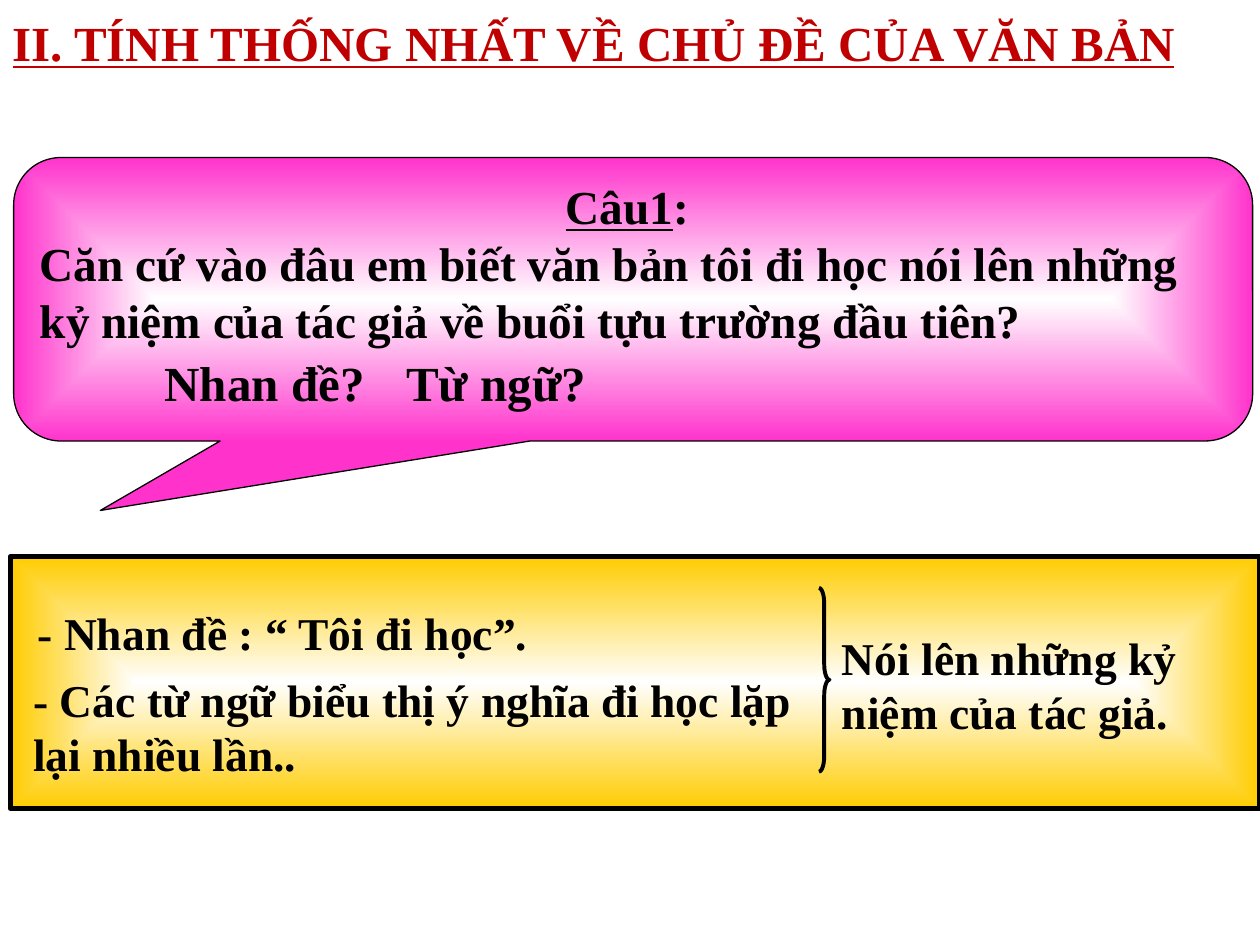
from dataclasses import dataclass

from lxml import etree
from pptx import Presentation
from pptx.dml.color import RGBColor
from pptx.enum.shapes import MSO_SHAPE as Shape
from pptx.enum.text import MSO_ANCHOR as Anchor, MSO_AUTO_SIZE as AutoSize, PP_ALIGN as Align
from pptx.oxml.ns import qn
from pptx.util import Inches, Pt

COLUMNS, ROWS = 120, 90
TITLE_ONLY = 5


@dataclass(frozen=True)
class Theme:
    font: str = "Times New Roman"
    ink: str = "000000"
    heading: str = "C00000"
    glow: str = "FFFFFF"
    question: str = "FF33CC"
    answer: str = "FFCC00"
    title_size: int = 28
    question_size: int = 27
    answer_size: int = 26


def write(paragraph, text, *, theme, size, color=None, underline=False, align=Align.LEFT):
    paragraph.alignment = align
    run = paragraph.add_run()
    run.text = text
    font = run.font
    font.name, font.size = theme.font, Pt(size)
    font.bold, font.underline = True, underline
    font.color.rgb = RGBColor.from_string(color or theme.ink)


class SlideBuilder:
    def __init__(self, presentation, theme):
        self.theme = theme
        self.width = presentation.slide_width
        self.height = presentation.slide_height
        self.slide = presentation.slides.add_slide(presentation.slide_layouts[TITLE_ONLY])

    def place(self, column, row, columns, rows):
        across, down = self.width / COLUMNS, self.height / ROWS
        return [int(value) for value in (column * across, row * down, columns * across, rows * down)]

    def title(self, text, *area):
        title = self.slide.shapes.title
        title.left, title.top, title.width, title.height = self.place(*area)
        frame = title.text_frame
        frame.auto_size, frame.vertical_anchor = AutoSize.NONE, Anchor.MIDDLE
        write(frame.paragraphs[0], text, theme=self.theme, size=self.theme.title_size,
              color=self.theme.heading, underline=True)

    def shape(self, kind, *area, line_width, edge=None, path="rect", adjustments=()):
        shape = self.slide.shapes.add_shape(kind, *self.place(*area))
        shape.shadow.inherit = False
        shape.line.color.rgb = RGBColor.from_string(self.theme.ink)
        shape.line.width = Pt(line_width)
        for index, value in enumerate(adjustments):
            shape.adjustments[index] = value
        if edge:
            self.glow(shape, edge, path)
        else:
            shape.fill.background()
        return shape

    def glow(self, shape, edge, path):
        shape.fill.gradient()
        for stop, position, color in zip(shape.fill.gradient_stops, (0, 1), (self.theme.glow, edge)):
            stop.position = position
            stop.color.rgb = RGBColor.from_string(color)
        gradient = shape._element.spPr.find(qn("a:gradFill"))
        linear = gradient.find(qn("a:lin"))
        radial = etree.SubElement(gradient, qn("a:path"), {"path": path})
        etree.SubElement(radial, qn("a:fillToRect"), dict.fromkeys("ltrb", "50000"))
        gradient.replace(linear, radial)

    def text(self, text, *area, size, wrap=False):
        frame = self.slide.shapes.add_textbox(*self.place(*area)).text_frame
        frame.word_wrap, frame.auto_size = wrap, AutoSize.SHAPE_TO_FIT_TEXT
        write(frame.paragraphs[0], text, theme=self.theme, size=size)

    def callout(self, heading, question, *area):
        shape = self.shape(Shape.ROUNDED_RECTANGULAR_CALLOUT, *area, line_width=0.75,
                           edge=self.theme.question, adjustments=(-0.43, 0.745, 0.167))
        frame = shape.text_frame
        frame.word_wrap, frame.vertical_anchor = True, Anchor.TOP
        style = {"theme": self.theme, "size": self.theme.question_size}
        first = frame.paragraphs[0]
        write(first, heading, underline=True, align=Align.CENTER, **style)
        write(first, ": ", align=Align.CENTER, **style)
        write(frame.add_paragraph(), question, **style)


def main():
    presentation = Presentation()
    presentation.slide_width, presentation.slide_height = Inches(10), Inches(7.5)
    theme = Theme()
    builder = SlideBuilder(presentation, theme)

    builder.title("II. TÍNH THỐNG NHẤT VỀ CHỦ ĐỀ CỦA VĂN BẢN", 0, 0, 120, 8)
    builder.shape(Shape.RECTANGLE, 1, 53, 119, 24, line_width=3, edge=theme.answer, path="shape")
    builder.shape(Shape.RIGHT_BRACE, 78, 56, 1, 17.5, line_width=2.25, adjustments=(1.458, 0.5))
    builder.text("Nói lên những kỷ niệm của tác giả.", 79, 59.4, 40, 11.6,
                 size=theme.answer_size, wrap=True)

    builder.callout("Câu1", "Căn cứ vào đâu em biết văn bản tôi đi học nói lên những "
                    "kỷ niệm của tác giả về buổi tựu trường đầu tiên?", 1.3, 15, 118, 27)
    builder.text("Nhan đề?", 14.5, 33, 21.7, 6.8, size=theme.title_size)
    builder.text("Từ ngữ?", 37.5, 33, 19.7, 6.8, size=theme.title_size)

    builder.text("- Nhan đề : “ Tôi đi học”.", 2.4, 57, 49.6, 6.5, size=theme.answer_size)
    builder.text("- Các từ ngữ biểu thị ý nghĩa đi học lặp lại nhiều lần..", 2, 63.4, 80, 11.6,
                 size=theme.answer_size, wrap=True)
    presentation.save("out.pptx")


if __name__ == "__main__":
    main()
